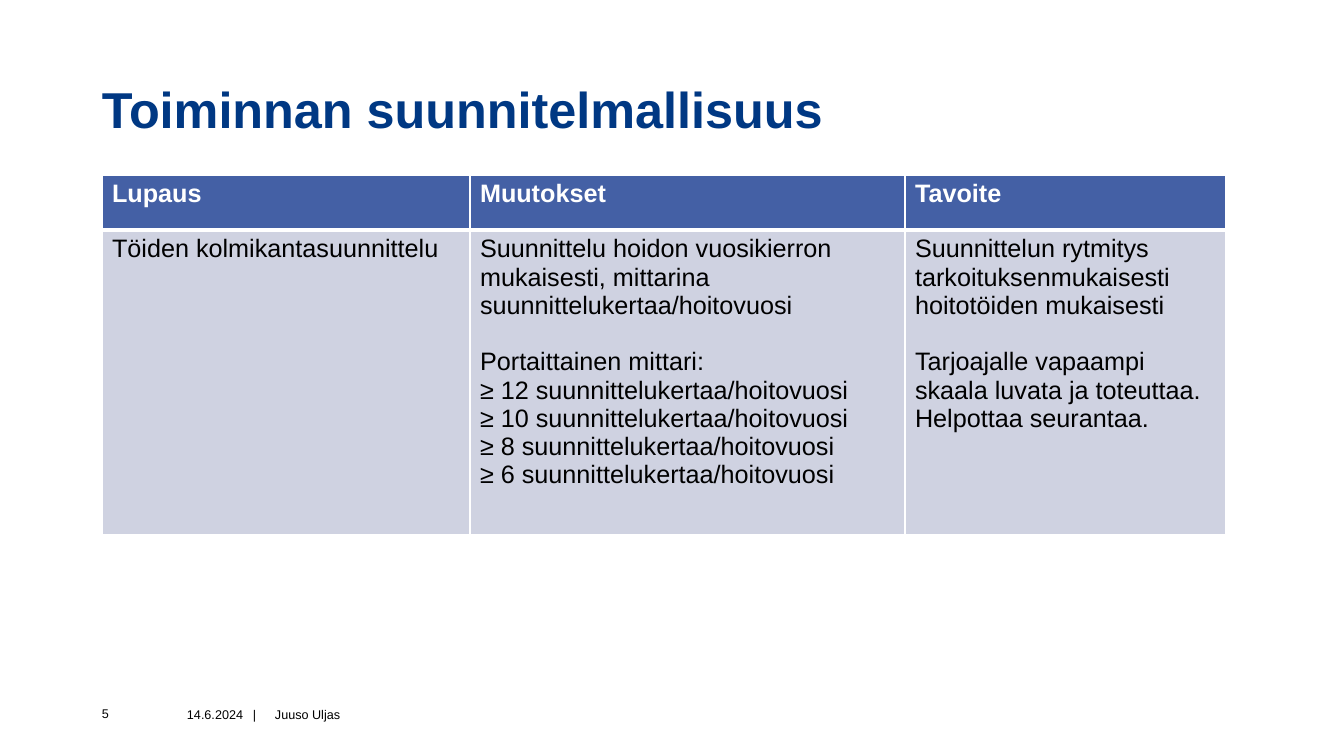
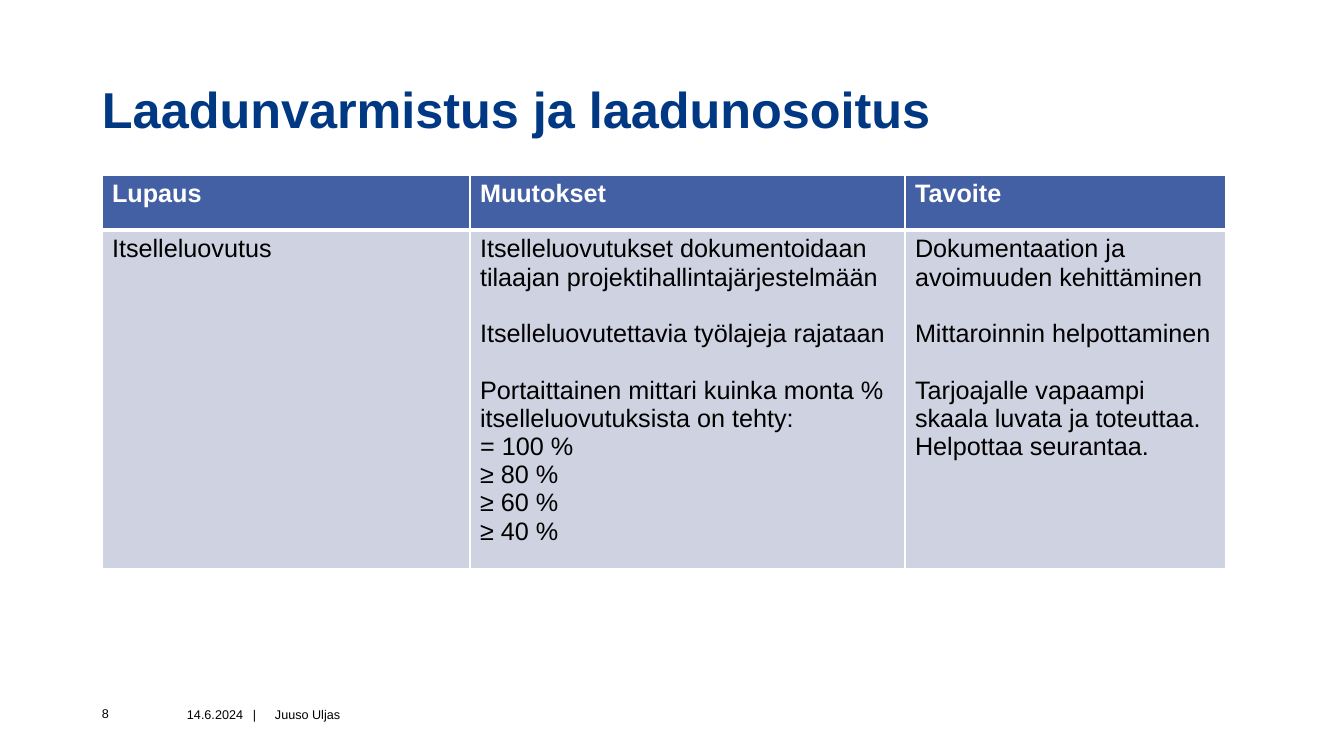
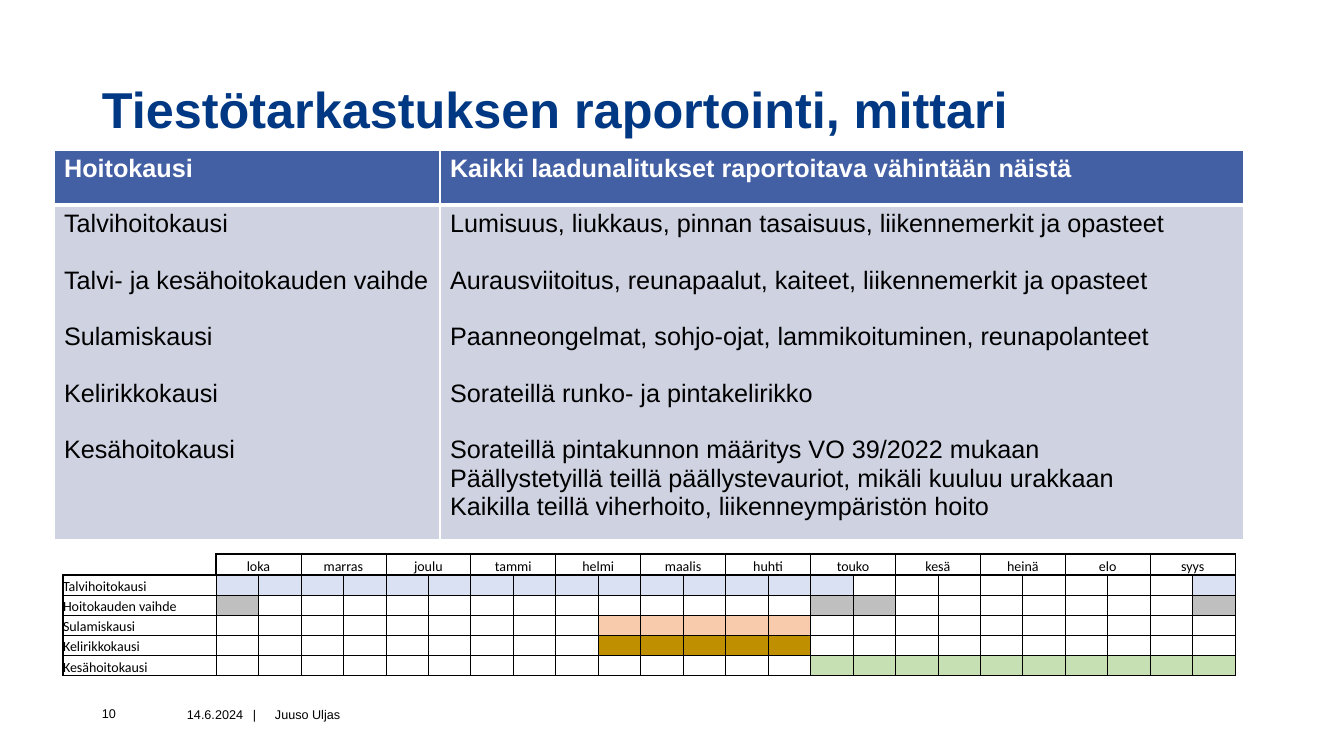
import pptx
import pptx.util
import pptx.dml.color
import pptx.enum.text
import pptx.oxml.ns
from lxml import etree

COLOURS = {
    "title": "003883", "header": "4460A5", "body": "CFD2E1", "white": "FFFFFF", "black": "000000",
    "winter": "D9E1F2", "change": "BFBFBF", "melt": "F8CBAD", "thaw": "BF8F00", "summer": "C6E0B4",
}
DATE, AUTHOR = "14.6.2024\t|", "Juuso Uljas"
PROMISE_HEADERS = ["Lupaus", "Muutokset", "Tavoite"]
PROMISE_PLACE = {"left": 102, "top": 175, "widths": [368, 435, 321]}

SLIDES = [
    {
        "title": "Toiminnan suunnitelmallisuus", "number": "5",
        "headers": PROMISE_HEADERS, **PROMISE_PLACE, "body_height": 305,
        "cells": [
            [["Töiden kolmikantasuunnittelu"]],
            [["Suunnittelu hoidon vuosikierron mukaisesti, mittarina suunnittelukertaa/hoitovuosi"],
             ["Portaittainen mittari:",
              "≥ 12 suunnittelukertaa/hoitovuosi",
              "≥ 10 suunnittelukertaa/hoitovuosi",
              "≥ 8 suunnittelukertaa/hoitovuosi",
              "≥ 6 suunnittelukertaa/hoitovuosi"]],
            [["Suunnittelun rytmitys tarkoituksenmukaisesti hoitotöiden mukaisesti"],
             ["Tarjoajalle vapaampi skaala luvata ja toteuttaa.", "Helpottaa seurantaa."]],
        ],
    },
    {
        "title": "Laadunvarmistus ja laadunosoitus", "number": "8",
        "headers": PROMISE_HEADERS, **PROMISE_PLACE, "body_height": 320,
        "cells": [
            [["Itselleluovutus"]],
            [["Itselleluovutukset dokumentoidaan tilaajan projektihallintajärjestelmään"],
             ["Itselleluovutettavia työlajeja rajataan"],
             ["Portaittainen mittari kuinka monta % itselleluovutuksista on tehty:",
              "= 100 %", "≥ 80 %", "≥ 60 %", "≥ 40 %"]],
            [["Dokumentaation ja avoimuuden kehittäminen"],
             ["Mittaroinnin helpottaminen"],
             ["Tarjoajalle vapaampi skaala luvata ja toteuttaa. Helpottaa seurantaa."]],
        ],
    },
    {
        "title": "Tiestötarkastuksen raportointi, mittari", "number": "10",
        "headers": ["Hoitokausi", "Kaikki laadunalitukset raportoitava vähintään näistä"],
        "left": 54, "top": 150, "widths": [386, 804], "body_height": 320,
        "cells": [
            [["Talvihoitokausi"], ["Talvi- ja kesähoitokauden vaihde"], ["Sulamiskausi"],
             ["Kelirikkokausi"], ["Kesähoitokausi"]],
            [["Lumisuus, liukkaus, pinnan tasaisuus, liikennemerkit ja opasteet"],
             ["Aurausviitoitus, reunapaalut, kaiteet, liikennemerkit ja opasteet"],
             ["Paanneongelmat, sohjo-ojat, lammikoituminen, reunapolanteet"],
             ["Sorateillä runko- ja pintakelirikko"],
             ["Sorateillä pintakunnon määritys VO 39/2022 mukaan",
              "Päällystetyillä teillä päällystevauriot, mikäli kuuluu urakkaan",
              "Kaikilla teillä viherhoito, liikenneympäristön hoito"]],
        ],
    },
]

MONTHS = ["loka", "marras", "joulu", "tammi", "helmi", "maalis",
          "huhti", "touko", "kesä", "heinä", "elo", "syys"]
SEASONS = [
    ("Talvihoitokausi", "winter", [*range(1, 16), 24]),
    ("Hoitokauden vaihde", "change", [1, 15, 16, 24]),
    ("Sulamiskausi", "melt", range(10, 15)),
    ("Kelirikkokausi", "thaw", range(10, 15)),
    ("Kesähoitokausi", "summer", range(15, 25)),
]
HALF_MONTHS = 2 * len(MONTHS)

ALIGN = pptx.enum.text.PP_ALIGN
ANCHOR = pptx.enum.text.MSO_ANCHOR
qn = pptx.oxml.ns.qn


def px(length):
    return pptx.util.Emu(round(length * 914400 / 100.8))


def rgb(name):
    return pptx.dml.color.RGBColor.from_string(COLOURS[name])


def style(paragraph, size, colour="black", bold=False, face="Arial"):
    font = paragraph.font
    font.size = pptx.util.Pt(size)
    font.name = face
    font.bold = bold
    font.color.rgb = rgb(colour)


def no_margins(frame):
    frame.margin_left = frame.margin_top = frame.margin_right = frame.margin_bottom = 0


def add_text(slide, place, text, size, colour="black", bold=False, spacing=1.0):
    frame = slide.shapes.add_textbox(*map(px, place)).text_frame
    frame.word_wrap = True
    frame.vertical_anchor = ANCHOR.MIDDLE
    no_margins(frame)
    paragraph = frame.paragraphs[0]
    paragraph.text = text
    paragraph.line_spacing = spacing
    return paragraph, lambda: style(paragraph, size, colour, bold)


def add_line(slide, *args, tab=None, **kwargs):
    paragraph, finish = add_text(slide, *args, **kwargs)
    if tab:
        stops = etree.SubElement(paragraph._p.get_or_add_pPr(), qn("a:tabLst"))
        etree.SubElement(stops, qn("a:tab"), pos=str(px(tab)), algn="l")
    finish()


def set_borders(cell, colour, **widths):
    properties = cell._tc.get_or_add_tcPr()
    for index, side in enumerate("LRTB"):
        width = widths[side]
        line = etree.Element(qn("a:ln" + side), w=str(round(width * 12700)))
        if width:
            fill = etree.SubElement(line, qn("a:solidFill"))
            etree.SubElement(fill, qn("a:srgbClr"), val=COLOURS[colour])
        else:
            etree.SubElement(line, qn("a:noFill"))
        properties.insert(index, line)


def paint(cell, colour):
    if colour:
        cell.fill.solid()
        cell.fill.fore_color.rgb = rgb(colour)
    else:
        cell.fill.background()


def add_grid(slide, left, top, widths, heights):
    place = map(px, (left, top, sum(widths), sum(heights)))
    table = slide.shapes.add_table(len(heights), len(widths), *place).table
    table.first_row = table.horz_banding = False
    for column, width in zip(table.columns, widths):
        column.width = px(width)
    for row, height in zip(table.rows, heights):
        row.height = px(height)
    return table


def fill_groups(cell, groups, colour, bold):
    frame = cell.text_frame
    lines = [(text, g > 0 and i == 0) for g, group in enumerate(groups) for i, text in enumerate(group)]
    for index, (text, starts_group) in enumerate(lines):
        paragraph = frame.add_paragraph() if index else frame.paragraphs[0]
        paragraph.text = text
        if starts_group:
            paragraph.space_before = pptx.util.Pt(20.2)
        style(paragraph, 18, colour, bold)


def add_promises(slide, content):
    table = add_grid(slide, content["left"], content["top"], content["widths"],
                     [55, content["body_height"]])
    for column, (header, groups) in enumerate(zip(content["headers"], content["cells"])):
        head, body = table.cell(0, column), table.cell(1, column)
        fill_groups(head, [[header]], "white", True)
        fill_groups(body, groups, "black", False)
        paint(head, "header")
        paint(body, "body")
        set_borders(head, "white", L=1, R=1, T=1, B=3)
        set_borders(body, "white", L=1, R=1, T=3, B=1)


def fill_calendar_cell(cell, text, align):
    no_margins(cell)
    cell.vertical_anchor = ANCHOR.BOTTOM
    paragraph = cell.text_frame.paragraphs[0]
    if text:
        paragraph.text = text
    else:
        etree.SubElement(paragraph._p, qn("a:endParaRPr"), sz="1000")
    paragraph.alignment = align
    style(paragraph, 10, face="Calibri")


def add_calendar(slide):
    table = add_grid(slide, 63, 554, [153] + [85 / 2] * HALF_MONTHS, [21, 20, 20, 20, 20, 21])
    for index in range(1, HALF_MONTHS, 2):
        table.cell(0, index).merge(table.cell(0, index + 1))
    season_rows = [(label, colour, set(halves)) for label, colour, halves in SEASONS]
    for row, (label, colour, halves) in enumerate([("", None, set())] + season_rows):
        for column in range(HALF_MONTHS + 1):
            cell = table.cell(row, column)
            month = row == 0 and column % 2 == 1
            text = MONTHS[column // 2] if month else label if column == 0 else ""
            fill_calendar_cell(cell, text, ALIGN.CENTER if month else ALIGN.LEFT)
            paint(cell, colour if column in halves else None)
            corner = row == column == 0
            right_edge = column + month == HALF_MONTHS
            set_borders(
                cell, "black",
                L=0 if corner else 1 if column == 0 or (row == 0 and column == 1) else 0.5,
                R=1 if corner or right_edge else 0.5,
                T=0 if corner else 1 if row < 2 else 0.5,
                B=1 if row in (0, len(SEASONS)) else 0.5,
            )


def add_frame(slide, content):
    add_line(slide, (102, 51, 1172, 123), content["title"], 36, "title", True, spacing=0.9)
    add_line(slide, (187, 703, 81, 22), DATE, 9, spacing=1.1, tab=66)
    add_line(slide, (275, 703, 454, 22), AUTHOR, 9, spacing=1.1)
    add_line(slide, (102, 703, 53, 22), content["number"], 9)


def main():
    deck = pptx.Presentation()
    deck.slide_width, deck.slide_height = px(1344), px(756)
    for content in SLIDES:
        slide = deck.slides.add_slide(deck.slide_layouts[6])
        add_frame(slide, content)
        add_promises(slide, content)
    add_calendar(slide)
    deck.save("out.pptx")


if __name__ == "__main__":
    main()
